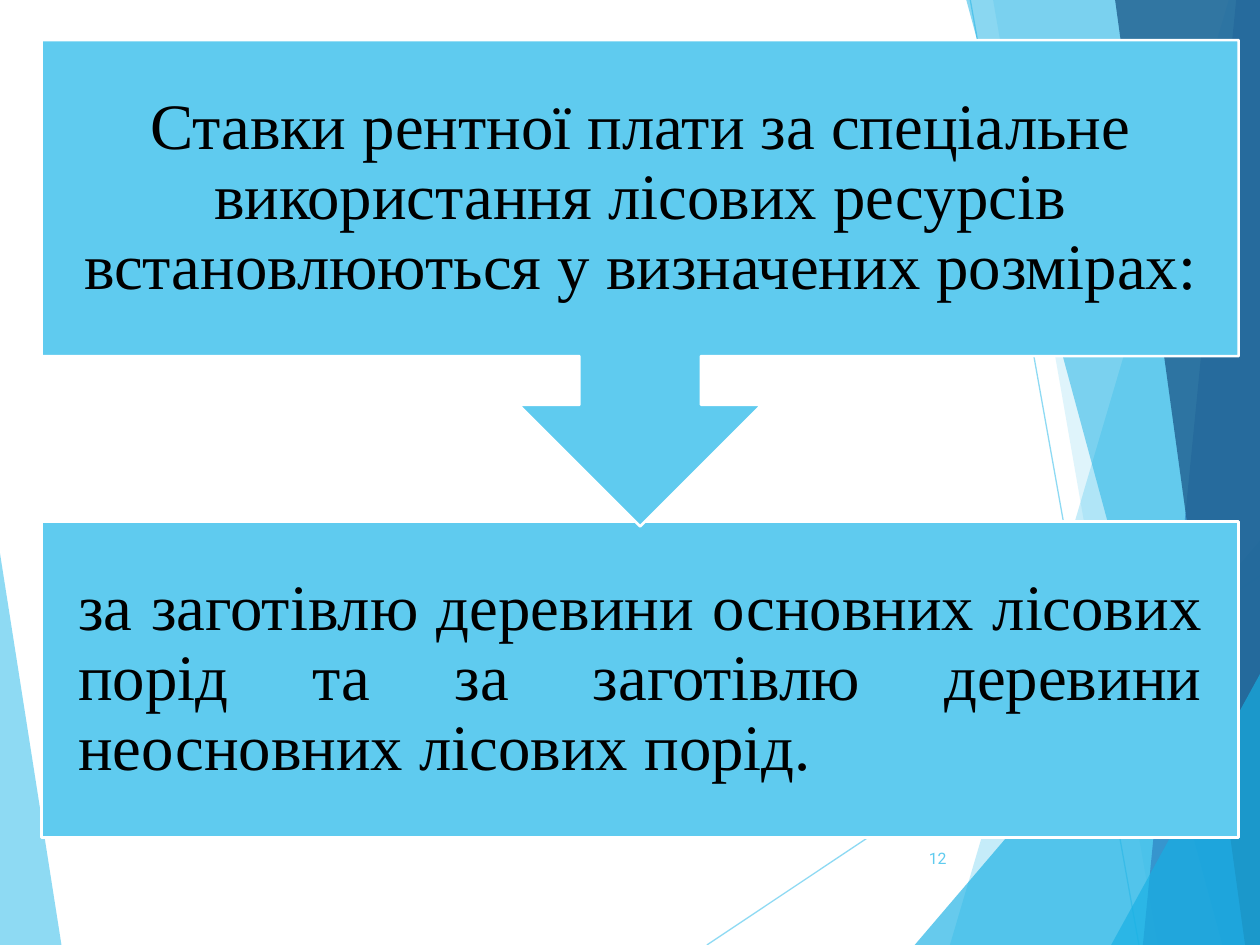
from lxml import etree
from pptx import Presentation
from pptx.dml.color import RGBColor
from pptx.enum.shapes import MSO_CONNECTOR, MSO_SHAPE
from pptx.enum.text import MSO_ANCHOR, PP_ALIGN
from pptx.oxml.ns import qn
from pptx.util import Cm, Pt

STRAIGHT = MSO_CONNECTOR.STRAIGHT
RECT, CALLOUT = MSO_SHAPE.RECTANGLE, MSO_SHAPE.UP_ARROW_CALLOUT
MIDDLE = MSO_ANCHOR.MIDDLE
CENTER, JUSTIFY, RIGHT = PP_ALIGN.CENTER, PP_ALIGN.JUSTIFY, PP_ALIGN.RIGHT

SKY = RGBColor(0x5F, 0xCB, 0xEF)
CYAN = RGBColor(0x17, 0xB0, 0xE4)
BLUE = RGBColor(0x2E, 0x83, 0xC3)
NAVY = RGBColor(0x22, 0x62, 0x92)
WHITE = RGBColor(0xFF, 0xFF, 0xFF)
BLACK = RGBColor(0, 0, 0)

WIDTH, HEIGHT = 25.4, 19.05
BOX_LEFT, BOX_WIDTH, BOX_HEIGHT = 0.84, 24.13, 6.37
CALLOUT_TOP, CALLOUT_HEIGHT, RESULT_TOP = 0.81, 9.8, 10.52
BODY = {"name": "Times New Roman", "size": Pt(37)}
NUMBER = {"name": "Roboto", "size": Pt(9)}

RULES = [
    (14.25, HEIGHT, WIDTH, 11.61),
    (19.56, 0, 22.96, HEIGHT),
]
PANELS = [
    (24.77, 0, 19.15, SKY, 36),
    (20.02, 0, 23.34, SKY, 20),
    (WIDTH, 10.9, 18.44, CYAN, 66),
    (19.48, 0, 24.64, CYAN, 50),
    (24.92, 0, 23.04, BLUE, 70),
    (22.48, 0, 25.1, NAVY, 82),
    (WIDTH, 13.59, 22.4, CYAN, 66),
]


def set_opacity(s, percent):
    """Give the solid colour of a shape or line an opacity."""
    color = next(s._element.spPr.iter(qn("a:srgbClr")))
    etree.SubElement(color, qn("a:alpha")).set("val", str(percent * 1000))


def add_panel(slide, top_x, top_y, bottom_x, color, opacity, edge=WIDTH):
    """Draw a translucent panel between a slanted side and a slide edge."""
    builder = slide.shapes.build_freeform(Cm(top_x), Cm(top_y))
    corners = [(bottom_x, HEIGHT), (edge, HEIGHT), (edge, top_y)]
    builder.add_line_segments([(Cm(x), Cm(y)) for x, y in corners])
    s = builder.convert_to_shape()
    s.shadow.inherit = False
    s.fill.solid()
    s.fill.fore_color.rgb = color
    s.line.fill.background()
    set_opacity(s, opacity)


def add_rule(slide, *ends):
    """Draw a thin translucent line."""
    s = slide.shapes.add_connector(STRAIGHT, *map(Cm, ends))
    s.line.color.rgb = SKY
    s.line.width = Pt(0.75)
    set_opacity(s, 70)
    etree.SubElement(s._element.spPr, qn("a:effectLst"))


def add_block(slide, kind, top, height, rotation=0):
    """Draw a blue block with a white outline."""
    s = slide.shapes.add_shape(
        kind, Cm(BOX_LEFT), Cm(top), Cm(BOX_WIDTH), Cm(height))
    s.shadow.inherit = False
    s.rotation = rotation
    s.fill.solid()
    s.fill.fore_color.rgb = SKY
    s.line.color.rgb = WHITE
    s.line.width = Pt(1.5)


def add_text(slide, text, box, align, font, color, frame=None, spacing=1.0):
    """Write one paragraph in a vertically centred text box."""
    tf = slide.shapes.add_textbox(*map(Cm, box)).text_frame
    settings = {"word_wrap": True, "vertical_anchor": MIDDLE, **(frame or {})}
    for name, value in settings.items():
        setattr(tf, name, value)
    p = tf.paragraphs[0]
    p.alignment = align
    p.line_spacing = spacing
    r = p.add_run()
    r.text = text
    for name, value in font.items():
        setattr(r.font, name, value)
    r.font.color.rgb = color


def add_block_text(slide, text, top, align):
    """Write the large text of a block."""
    sides = ("left", "top", "right", "bottom")
    margins = {f"margin_{side}": Cm(0.74) for side in sides}
    box = (BOX_LEFT, top, BOX_WIDTH, BOX_HEIGHT)
    add_text(slide, text, box, align, BODY, BLACK, margins, 0.9)


def main():
    """Build and save the slide."""
    prs = Presentation()
    prs.slide_width, prs.slide_height = Cm(WIDTH), Cm(HEIGHT)
    slide = prs.slides.add_slide(prs.slide_layouts[6])

    add_panel(slide, 0, 11.15, 1.24, SKY, 70, edge=0)
    for rule in RULES:
        add_rule(slide, *rule)
    for panel in PANELS:
        add_panel(slide, *panel)

    add_block(slide, RECT, RESULT_TOP, BOX_HEIGHT)
    add_block_text(
        slide,
        "за заготівлю деревини основних лісових порід та за заготівлю "
        "деревини неосновних лісових порід.",
        RESULT_TOP, JUSTIFY)
    add_block(slide, CALLOUT, CALLOUT_TOP, CALLOUT_HEIGHT, rotation=180)
    add_block_text(
        slide,
        "Ставки рентної плати за спеціальне використання лісових ресурсів "
        "встановлюються у визначених розмірах:",
        CALLOUT_TOP, CENTER)
    add_text(slide, "12", (17.91, 16.79, 1.42, 1.02), RIGHT, NUMBER, SKY)

    prs.save("out.pptx")


if __name__ == "__main__":
    main()
